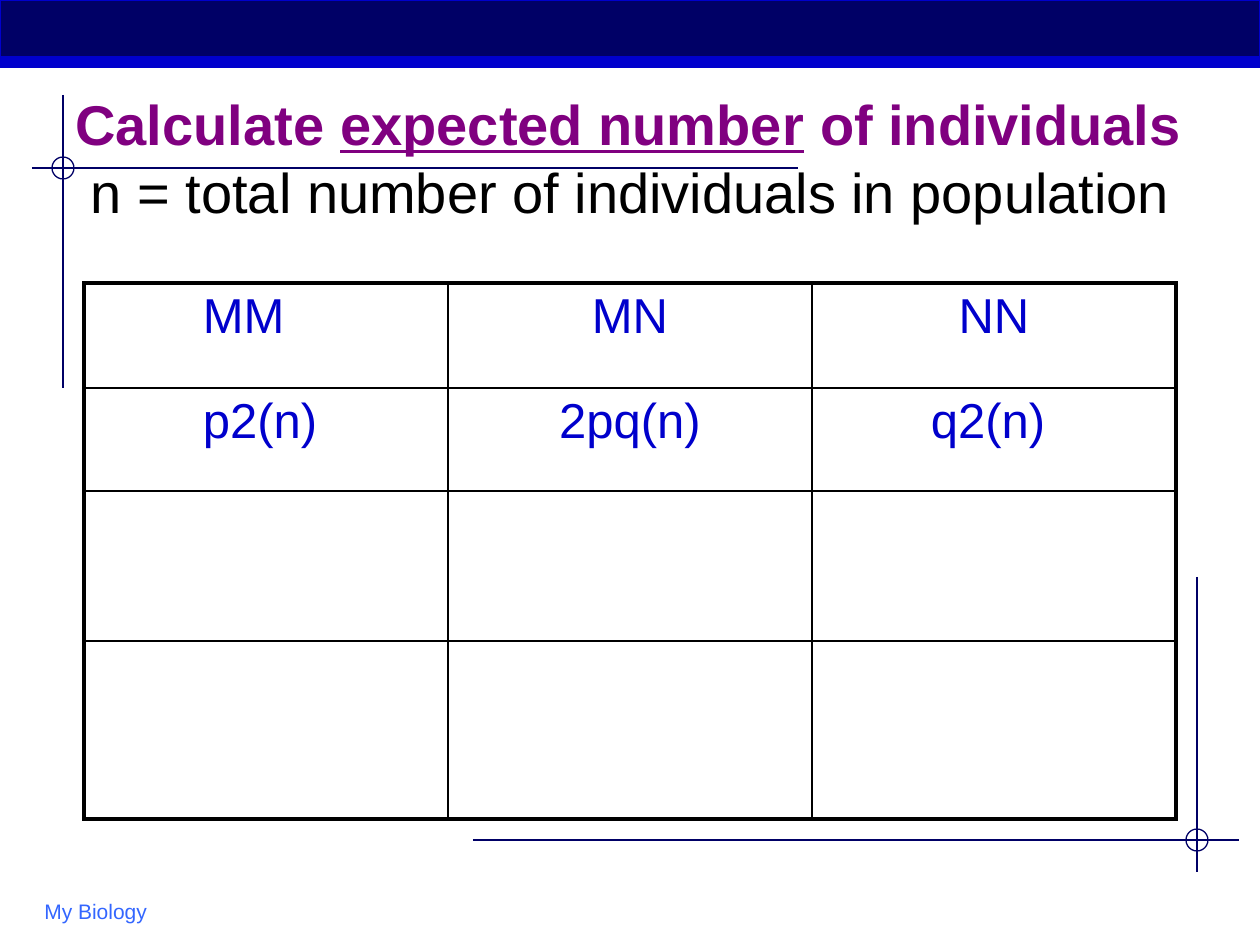
from lxml.etree import SubElement
from pptx import Presentation
from pptx.dml.color import RGBColor
from pptx.enum.shapes import MSO_CONNECTOR, MSO_SHAPE
from pptx.enum.text import MSO_ANCHOR, PP_ALIGN
from pptx.oxml import parse_xml
from pptx.oxml.ns import nsdecls, qn
from pptx.util import Emu, Pt

COLORS = {"navy": "000066", "blue": "0000CC", "purple": "800080",
          "black": "000000", "footer": "3366FF"}
FONT = "Arial"
WIDTH, HEIGHT = 1260, 945

# Content
TITLE_LINES = [
    [("Calculate ", "purple", True, False),
     ("expected number", "purple", True, True),
     (" of individuals", "purple", True, False)],
    [(" n = total number of individuals in population", "black", False, False)],
]
FOOTER = "My Biology"
GENOTYPES = [
    ["MM\t", "MN", "NN"],
    ["p2(n)\t", "2pq(n)", "q2(n)\t"],
    ["", "", ""],
    ["", "", ""],
]
ROW_HEIGHTS = [105, 103, 150, 178]
COLUMN_WIDTHS = [364] * 3
# Crosshair: centre, then horizontal extent, then vertical extent
CROSSHAIRS = [((63, 168), (32, 798), (95, 388)),
              ((1197, 840), (473, 1239), (577, 872))]
RING_RADIUS = 11


def px(count):
    return Emu(round(count * 914400 / 126))


def color(name):
    return RGBColor.from_string(COLORS[name])


def style(span, size, color_name, bold=False, underline=False):
    font = span.font
    font.name, font.size = FONT, Pt(size)
    font.bold, font.underline = bold, underline
    font.color.rgb = color(color_name)


def add_line(page, x1, y1, x2, y2, color_name, width):
    line = page.shapes.add_connector(MSO_CONNECTOR.STRAIGHT, px(x1), px(y1), px(x2), px(y2))
    line.line.color.rgb = color(color_name)
    line.line.width = Pt(width)
    SubElement(line._element.spPr, qn("a:effectLst"))


def add_crosshair(page, center, across, down):
    x, y = center
    add_line(page, x, down[0], x, down[1], "navy", 0.75)
    add_line(page, across[0], y, across[1], y, "navy", 0.75)
    ring = page.shapes.add_shape(MSO_SHAPE.FLOWCHART_CONNECTOR,
                                 px(x - RING_RADIUS), px(y - RING_RADIUS),
                                 px(2 * RING_RADIUS), px(2 * RING_RADIUS))
    ring.shadow.inherit = False
    ring.fill.background()
    ring.line.color.rgb = color("navy")
    ring.line.width = Pt(0.75)


def add_text_box(page, left, top, width, height, anchor):
    box = page.shapes.add_textbox(px(left), px(top), px(width), px(height))
    frame = box.text_frame
    frame.word_wrap = True
    frame.vertical_anchor = anchor
    return frame


def add_grid(page, left, top, widths, heights):
    table = page.shapes.add_table(len(heights), len(widths), px(left), px(top),
                                  px(sum(widths)), px(sum(heights))).table
    table.first_row = table.horz_banding = False
    for column, width in zip(table.columns, widths):
        column.width = px(width)
    for row, height in zip(table.rows, heights):
        row.height = px(height)
    return table


def set_borders(cell, color_name, **widths):
    properties = cell._tc.get_or_add_tcPr()
    for index, side in enumerate("LRTB"):
        properties.insert(index, parse_xml(
            f'<a:ln{side} {nsdecls("a")} w="{Pt(widths[side])}"><a:solidFill>'
            f'<a:srgbClr val="{COLORS[color_name]}"/></a:solidFill></a:ln{side}>'))


def add_band(page):
    cell = add_grid(page, 0, 0, [WIDTH], [57]).cell(0, 0)
    cell.margin_top = cell.margin_bottom = 0
    cell.text_frame.paragraphs[0].font.size = Pt(12)
    cell.fill.solid()
    cell.fill.fore_color.rgb = color("navy")
    set_borders(cell, "blue", L=1, R=1, T=1, B=1)


def add_title(page):
    frame = add_text_box(page, 63, 73, 1176, 168, MSO_ANCHOR.MIDDLE)
    para = frame.paragraphs[0]
    for number, line in enumerate(TITLE_LINES):
        if number:
            para.add_line_break()
        for text, color_name, bold, underline in line:
            span = para.add_run()
            span.text = text
            style(span, 32, color_name, bold, underline)


def add_genotype_table(page):
    table = add_grid(page, 84, 283, COLUMN_WIDTHS, ROW_HEIGHTS)
    last_row, last_column = len(ROW_HEIGHTS) - 1, len(COLUMN_WIDTHS) - 1
    for r, texts in enumerate(GENOTYPES):
        for c, text in enumerate(texts):
            cell = table.cell(r, c)
            para = cell.text_frame.paragraphs[0]
            para.text = text
            para.alignment = PP_ALIGN.CENTER
            for span in para.runs:
                style(span, 28, "blue")
            cell.fill.background()
            set_borders(cell, "black",
                        L=2.25 if c == 0 else 1, R=2.25 if c == last_column else 1,
                        T=2.25 if r == 0 else 1, B=2.25 if r == last_row else 1)


def main():
    deck = Presentation()
    deck.slide_width, deck.slide_height = px(WIDTH), px(HEIGHT)
    page = deck.slides.add_slide(deck.slide_layouts[6])

    # Background decoration
    add_band(page)
    for crosshair in CROSSHAIRS:
        add_crosshair(page, *crosshair)
    add_line(page, 0, 63, WIDTH, 63, "blue", 6)

    # Footer
    footer = add_text_box(page, 32, 892, 262, 32, MSO_ANCHOR.TOP)
    footer.text = FOOTER
    style(footer.paragraphs[0].runs[0], 12, "footer")

    # Title and table
    add_title(page)
    add_genotype_table(page)
    deck.save("out.pptx")


if __name__ == "__main__":
    main()
